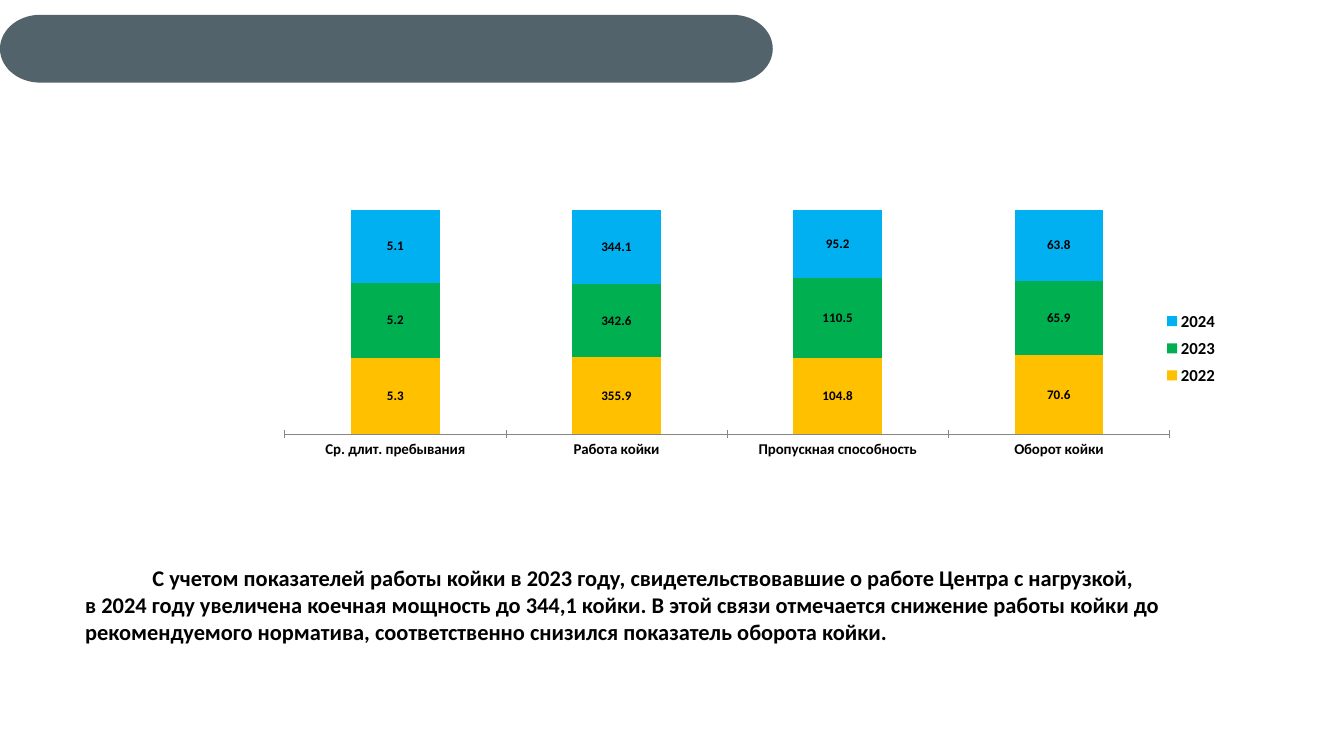
"""Build a slide with a stacked chart of hospital bed use and a short comment."""
import math
from dataclasses import dataclass

import lxml.etree
import pptx
import pptx.chart.data
import pptx.dml.color
import pptx.enum.chart
import pptx.enum.text
import pptx.oxml.ns
import pptx.util

Inches = pptx.util.Inches
qn = pptx.oxml.ns.qn


def tint(code):
    return pptx.dml.color.RGBColor.from_string(code)


@dataclass(frozen=True)
class Theme:
    face: str = "Calibri"
    ink: str = "000000"
    band: str = "41535C"
    axis: str = "868686"
    bars: tuple = ("FFC000", "00B050", "00B0F0")
    body: int = 24
    key: int = 18
    tick: int = 16
    label: int = 14


class Deck:
    def __init__(self, theme, wide, high):
        self.theme = theme
        self.file = pptx.Presentation()
        self.file.slide_width = Inches(wide)
        self.file.slide_height = Inches(high)
        self.slide = self.file.slides.add_slide(self.file.slide_layouts[6])

    def style(self, font, size):
        font.name = self.theme.face
        font.size = pptx.util.Pt(size)
        font.bold = True
        font.color.rgb = tint(self.theme.ink)

    def pill(self, left, top, wide, high, bend, alpha):
        rise = high / 2
        ends = ((left + wide - bend, -90), (left + bend, 90))
        dots = []
        for mid, start in ends:
            for step in range(0, 181, 6):
                turn = math.radians(start + step)
                dots.append((Inches(mid + bend * math.cos(turn)),
                             Inches(top + rise + rise * math.sin(turn))))
        form = self.slide.shapes.build_freeform(*dots[0])
        form.add_line_segments(dots[1:], close=True)
        shape = form.convert_to_shape()
        shape.shadow.inherit = False
        shape.fill.solid()
        shape.fill.fore_color.rgb = tint(self.theme.band)
        shade = shape.fill._xPr.find(qn("a:solidFill"))[0]
        lxml.etree.SubElement(shade, qn("a:alpha"), val=str(alpha * 1000))
        shape.line.fill.background()

    def place(self, node, index, inner, **frame):
        for old in node.findall(qn("c:layout")):
            node.remove(old)
        layout = lxml.etree.Element(qn("c:layout"))
        hand = lxml.etree.SubElement(layout, qn("c:manualLayout"))
        parts = [("layoutTarget", "inner")] if inner else []
        parts += [("xMode", "edge"), ("yMode", "edge"), *frame.items()]
        for name, val in parts:
            lxml.etree.SubElement(hand, qn(f"c:{name}"), val=str(val))
        node.insert(index, layout)

    def chart(self, box, cats, rows):
        enum, theme = pptx.enum.chart, self.theme
        data = pptx.chart.data.CategoryChartData()
        data.categories = cats
        for name, vals in rows.items():
            data.add_series(name, vals)
        chart = self.slide.shapes.add_chart(
            enum.XL_CHART_TYPE.COLUMN_STACKED_100, *map(Inches, box), data).chart
        self.style(chart.font, theme.key)
        chart.has_title = False
        chart.has_legend = True
        chart.legend.position = enum.XL_LEGEND_POSITION.RIGHT
        chart.legend.include_in_layout = False
        self.style(chart.legend.font, theme.key)
        self.place(chart.legend._element, 1, False, x=0.92, y=0.33, w=0.06, h=0.15)
        self.place(chart._chartSpace.chart.plotArea, 0, True,
                   x=0.104, y=0.169, w=0.826, h=0.382)
        chart.value_axis.visible = False
        chart.value_axis.has_major_gridlines = False
        axis = chart.category_axis
        axis.major_tick_mark = enum.XL_TICK_MARK.CROSS
        axis.minor_tick_mark = enum.XL_TICK_MARK.NONE
        axis.format.line.color.rgb = tint(theme.axis)
        self.style(axis.tick_labels.font, theme.tick)
        plot = chart.plots[0]
        plot.vary_by_categories = False
        plot.overlap = 100
        plot.gap_width = 150
        for row, code in zip(plot.series, theme.bars):
            row.format.fill.solid()
            row.format.fill.fore_color.rgb = tint(code)
            row.data_labels.show_value = True
            self.style(row.data_labels.font, theme.label)

    def text(self, box, lines, indent):
        frame = self.slide.shapes.add_textbox(*map(Inches, box)).text_frame
        frame.word_wrap = True
        frame.auto_size = pptx.enum.text.MSO_AUTO_SIZE.SHAPE_TO_FIT_TEXT
        for place, line in enumerate(lines):
            para = frame.add_paragraph() if place else frame.paragraphs[0]
            run = para.add_run()
            run.text = line
            self.style(run.font, self.theme.body)
        frame.paragraphs[0]._p.get_or_add_pPr().set("indent", str(Inches(indent)))


def main():
    deck = Deck(Theme(), 20, 11.25)
    deck.pill(0, 0.22, 11.5, 1.01, bend=0.6, alpha=90)
    deck.chart(
        (2.58, 1.64, 15.94, 8.75),
        ("Ср. длит. пребывания", "Работа койки", "Пропускная способность", "Оборот койки"),
        {"2022": (5.3, 355.9, 104.8, 70.6),
         "2023": (5.2, 342.6, 110.5, 65.9),
         "2024": (5.1, 344.1, 95.2, 63.8)})
    deck.text(
        (1.17, 8.35, 18.2, 1.31),
        ("С учетом показателей работы койки в 2023 году, свидетельствовавшие "
         "о работе Центра с нагрузкой,",
         "в 2024 году увеличена коечная мощность до 344,1 койки. В этой связи "
         "отмечается снижение работы койки до рекомендуемого норматива, "
         "соответственно снизился показатель оборота койки."),
        indent=1)
    deck.file.save("out.pptx")


if __name__ == "__main__":
    main()
